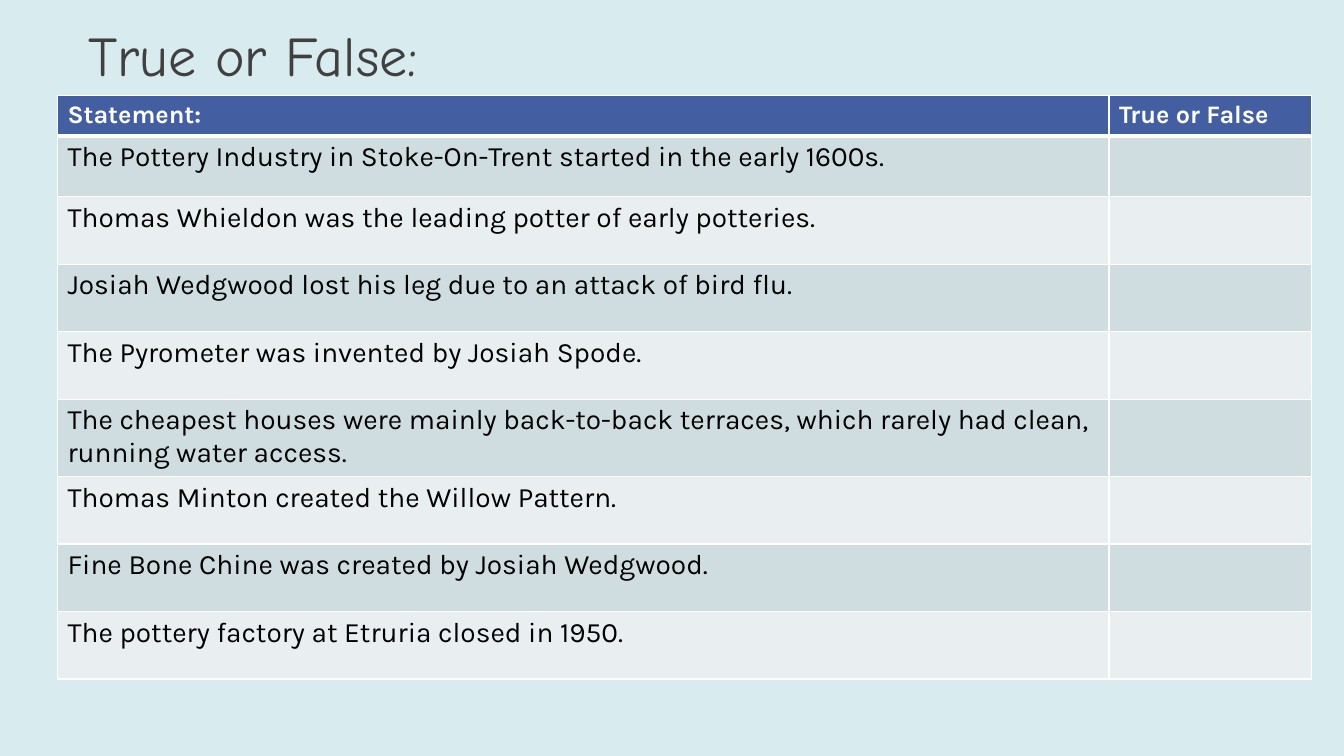
import pptx
import pptx.util
import pptx.oxml
import pptx.oxml.ns
import pptx.dml.color
import pptx.enum.text

PX = 9144
theme = {
    "back": "D8EBEE",
    "line": "FFFFFF",
    "head": "445EA2",
    "bands": ["CFDDE0", "E9EFF0"],
    "title": {"name": "Comic Neue", "size": 40, "bold": False, "color": "404040"},
    "label": {"name": "Karla", "size": 18, "bold": True, "color": "FFFFFF"},
    "body": {"name": "Karla", "size": 20, "bold": False, "color": "000000"},
}
claims = [
    "The Pottery Industry in Stoke-On-Trent started in the early 1600s.",
    "Thomas Whieldon was the leading potter of early potteries.",
    "Josiah Wedgwood lost his leg due to an attack of bird flu.",
    "The Pyrometer was invented by Josiah Spode.",
    "The cheapest houses were mainly back-to-back terraces, which rarely had clean, running water access.",
    "Thomas Minton created the Willow Pattern.",
    "Fine Bone Chine was created by Josiah Wedgwood.",
    "The pottery factory at Etruria closed in 1950.",
]
rows = [["Statement:", "True or False"]] + [[claim, ""] for claim in claims]
widths = [1043, 201]
heights = [35, 60] + [67] * (len(claims) - 1)


def write(para, text, style):
    para.text = text
    for font in [para.font] + [run.font for run in para.runs]:
        for key, value in style.items():
            if key == "color":
                font.color.rgb = pptx.dml.color.RGBColor.from_string(value)
            else:
                setattr(font, key, pptx.util.Pt(value) if key == "size" else value)


def paint(fill, color):
    fill.solid()
    fill.fore_color.rgb = pptx.dml.color.RGBColor.from_string(color)


deck = pptx.Presentation()
deck.slide_width = 1333 * PX
deck.slide_height = 750 * PX
slide = deck.slides.add_slide(deck.slide_layouts[6])
paint(slide.background.fill, theme["back"])

title = slide.shapes.add_textbox(78 * PX, 20 * PX, 1045 * PX, 75 * PX).text_frame
title.word_wrap = True
title.vertical_anchor = pptx.enum.text.MSO_ANCHOR.MIDDLE
title.paragraphs[0].line_spacing = 0.9
write(title.paragraphs[0], "True or False:", theme["title"])

frame = slide.shapes.add_table(
    len(rows), len(widths), 57 * PX, 95 * PX, sum(widths) * PX, sum(heights) * PX
)
table = frame.table
for col, width in zip(table.columns, widths):
    col.width = width * PX
for row, height in zip(table.rows, heights):
    row.height = height * PX

for r, texts in enumerate(rows):
    for c, text in enumerate(texts):
        cell = table.cell(r, c)
        props = cell._tc.get_or_add_tcPr()
        for side in "LRTB":
            thick = (r, side) in [(0, "B"), (1, "T")]
            width = pptx.util.Pt(3 if thick else 1)
            props.append(pptx.oxml.parse_xml(
                f'<a:ln{side} {pptx.oxml.ns.nsdecls("a")} w="{width}"><a:solidFill>'
                f'<a:srgbClr val="{theme["line"]}"/></a:solidFill></a:ln{side}>'
            ))
        paint(cell.fill, theme["bands"][(r - 1) % 2] if r else theme["head"])
        write(cell.text_frame.paragraphs[0], text, theme["body" if r else "label"])

deck.save("out.pptx")
